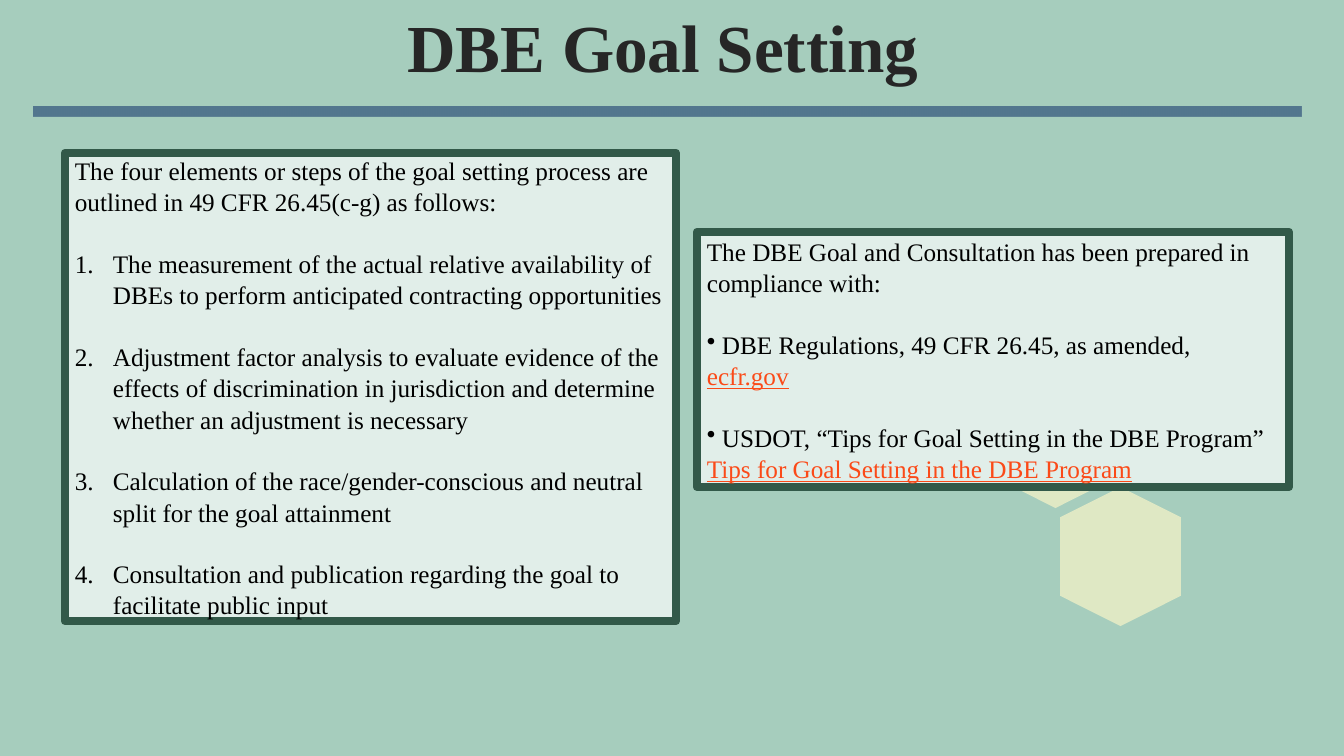
"""Build the DBE Goal Setting slide."""
from lxml import etree
from pptx import Presentation
from pptx.dml.color import RGBColor
from pptx.enum.shapes import MSO_SHAPE
from pptx.enum.text import MSO_ANCHOR, PP_ALIGN
from pptx.oxml.ns import qn
from pptx.util import Emu, Pt

RECTANGLE, HEXAGON = MSO_SHAPE.RECTANGLE, MSO_SHAPE.HEXAGON
TOP, MIDDLE = MSO_ANCHOR.TOP, MSO_ANCHOR.MIDDLE
LEFT, CENTER = PP_ALIGN.LEFT, PP_ALIGN.CENTER
TITLE_ONLY = 5
EMU_PER_PX = 914400 / 100.8
COLORS = {
    "background": "A6CDBD", "panel": "E1EEE9", "border": "325949",
    "rule": "002060", "hexagon": "DFE8C4", "title": "262626",
    "body": "000000", "link": "FB4A18",
}
LIST_MARKS = {
    "number": (38, "a:buAutoNum", {"type": "arabicPeriod"}),
    "bullet": (15, "a:buChar", {"char": "•"}),
}


def px(length):
    """Turn px into EMU."""
    return Emu(round(length * EMU_PER_PX))


def rgb(name):
    """Look up a named colour."""
    return RGBColor.from_string(COLORS[name])


class SlideBuilder:
    """Hold the style and the current slide."""

    font_name = "Times New Roman"
    body_size = Pt(18)
    line_spacing = 1.04
    gap = Pt(21.5)

    def __init__(self, presentation):
        """Add a slide with a plain background."""
        layout = presentation.slide_layouts[TITLE_ONLY]
        self.slide = presentation.slides.add_slide(layout)
        fill = self.slide.background.fill
        fill.solid()
        fill.fore_color.rgb = rgb("background")

    def style(self, font, color, **values):
        """Apply format values to a font."""
        font.color.rgb = rgb(color)
        for name, value in {"name": self.font_name, "size": self.body_size, **values}.items():
            setattr(font, name, value)

    def title(self, text, left, top, width, height):
        """Place and format the title placeholder."""
        title = self.slide.shapes.title
        places = {"left": left, "top": top, "width": width, "height": height}
        for name, value in places.items():
            setattr(title, name, px(value))
        frame = title.text_frame
        frame.text = text
        frame.vertical_anchor = TOP
        frame.margin_top = px(14)
        heading = frame.paragraphs[0]
        heading.alignment = CENTER
        self.style(heading.runs[0].font, "title", size=Pt(48), bold=True)

    def shape(self, kind, box, color, border=None, weight=0):
        """Add a filled shape with an optional border."""
        shape = self.slide.shapes.add_shape(kind, *map(px, box))
        shape.shadow.inherit = False
        shape.fill.solid()
        shape.fill.fore_color.rgb = rgb(color)
        if border:
            shape.line.color.rgb = rgb(border)
            shape.line.width = Pt(weight)
        else:
            shape.line.fill.background()
        return shape

    def rule(self, *box):
        """Add a half-transparent bar with soft edges."""
        bar = self.shape(RECTANGLE, box, "rule")
        properties = bar.element.spPr
        color = properties.find(qn("a:solidFill"))[0]
        etree.SubElement(color, qn("a:alpha"), val="50000")
        effects = properties.find(qn("a:effectLst"))
        etree.SubElement(effects, qn("a:softEdge"), rad="12700")

    def hexagon(self, *box):
        """Add an upright hexagon."""
        self.shape(HEXAGON, box, "hexagon").rotation = 90

    def panel(self, box, paragraphs):
        """Add a bordered box of (mark, gap before, runs) paragraphs."""
        panel = self.shape(RECTANGLE, box, "panel", "border", 6)
        etree.SubElement(panel.line._get_or_add_ln(), qn("a:round"))
        frame = panel.text_frame
        frame.word_wrap = True
        frame.vertical_anchor = MIDDLE
        for index, (mark, spaced, runs) in enumerate(paragraphs):
            paragraph = frame.add_paragraph() if index else frame.paragraphs[0]
            paragraph.alignment = LEFT
            paragraph.line_spacing = self.line_spacing
            if spaced:
                paragraph.space_before = self.gap
            if mark:
                self.list_mark(paragraph, mark)
            for text, color in runs:
                run = paragraph.add_run()
                run.text = text
                self.style(run.font, color, underline=color == "link")

    def list_mark(self, paragraph, mark):
        """Give a paragraph a hanging number or bullet."""
        indent, tag, attributes = LIST_MARKS[mark]
        properties = paragraph._p.get_or_add_pPr()
        properties.set("marL", str(px(indent)))
        properties.set("indent", str(-px(indent)))
        etree.SubElement(properties, qn(tag), attributes)


def main():
    """Build and save the slide."""
    presentation = Presentation()
    presentation.slide_width, presentation.slide_height = px(1344), px(756)
    builder = SlideBuilder(presentation)
    builder.title("DBE Goal Setting", 92, -9, 1142, 162)

    steps = [
        "The measurement of the actual relative availability of DBEs to perform "
        "anticipated contracting opportunities",
        "Adjustment factor analysis to evaluate evidence of the effects of "
        "discrimination in jurisdiction and determine whether an adjustment is necessary",
        "Calculation of the race/gender-conscious and neutral split for the goal attainment",
        "Consultation and publication regarding the goal to facilitate public input",
    ]
    steps_intro = ("The four elements or steps of the goal setting process are "
                   "outlined in 49 CFR 26.45(c-g) as follows:")
    builder.panel(
        (65, 153, 611, 468),
        [(None, False, [(steps_intro, "body")])]
        + [("number", True, [(step, "body")]) for step in steps],
    )
    builder.rule(34, 107, 1268, 10)
    for left, top in ((986, 378), (1051, 496)):
        builder.hexagon(left, top, 139, 121)

    compliance_intro = "The DBE Goal and Consultation has been prepared in compliance with:"
    references = [
        ("DBE Regulations, 49 CFR 26.45, as amended,", "ecfr.gov"),
        ("USDOT, “Tips for Goal Setting in the DBE Program”",
         "Tips for Goal Setting in the DBE Program"),
    ]
    compliance = [(None, False, [(compliance_intro, "body")])]
    for reference, link in references:
        compliance.append(("bullet", True, [(reference, "body")]))
        compliance.append((None, False, [(link, "link")]))
    builder.panel((697, 232, 592, 255), compliance)

    presentation.save("out.pptx")


if __name__ == "__main__":
    main()
